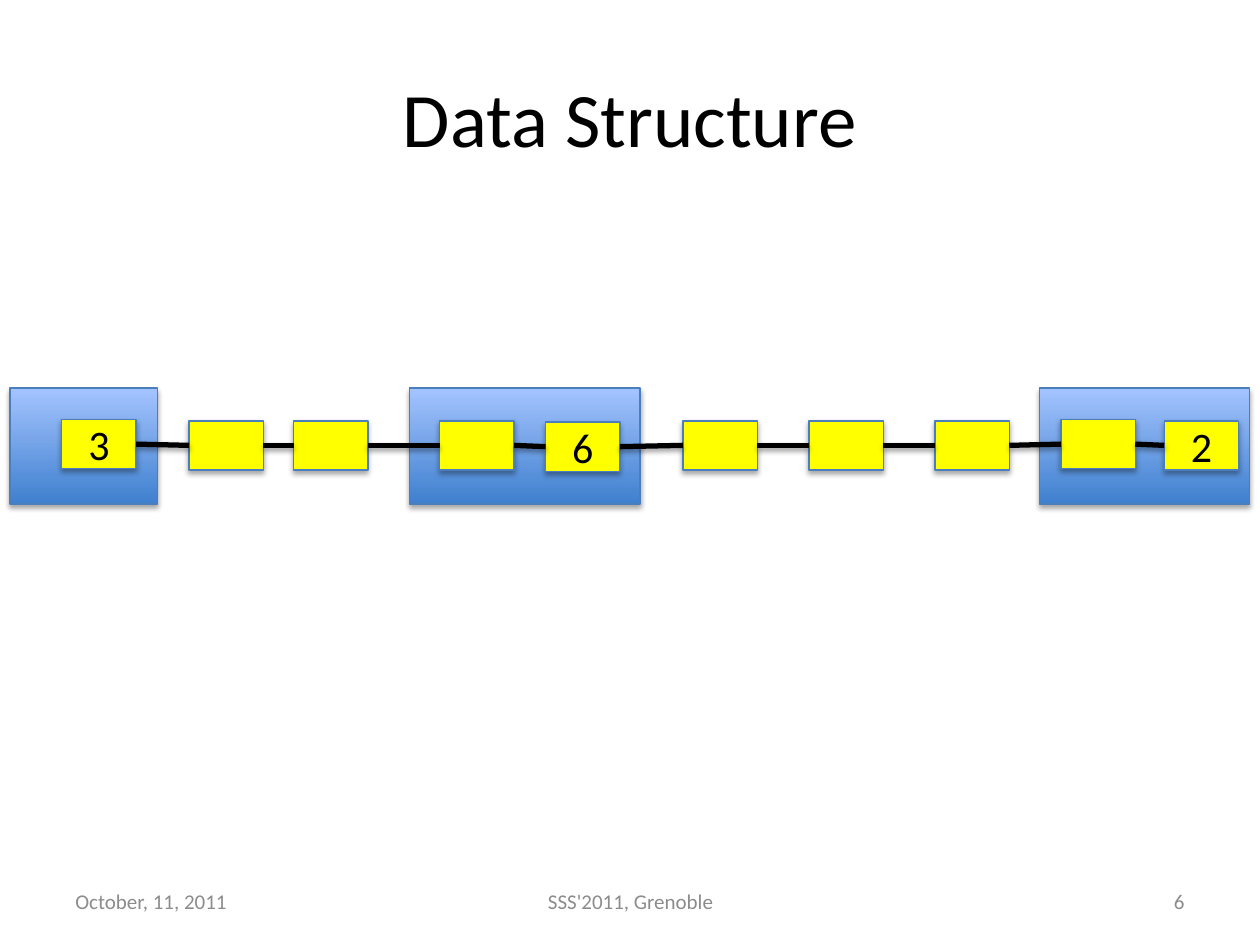
from itertools import pairwise

from lxml import etree
from pptx import Presentation
from pptx.dml.color import RGBColor
from pptx.enum.shapes import MSO_CONNECTOR, MSO_SHAPE
from pptx.enum.text import MSO_ANCHOR, PP_ALIGN
from pptx.oxml.ns import qn
from pptx.util import Inches, Pt

RECT, STRAIGHT = MSO_SHAPE.RECTANGLE, MSO_CONNECTOR.STRAIGHT
MIDDLE = MSO_ANCHOR.MIDDLE
LEFT, CENTER, RIGHT = PP_ALIGN.LEFT, PP_ALIGN.CENTER, PP_ALIGN.RIGHT
LEFT_SITE, RIGHT_SITE = 1, 3

FONT = "Calibri"
COLORS = {
    "text": "000000",
    "footer": "8C8C8C",
    "group_dark": "3F80CE",
    "group_light": "A4C4FF",
    "node": "FFFF00",
    "outline": "4B7EBC",
    "link": "000000",
    "shadow": "000000",
}
NODE_W, NODE_H = 0.59, 0.39

# (left, width) of each group, (left, top, label) of each node in the chain
GROUPS = [(0.08, 1.17), (3.25, 1.83), (8.25, 1.67)]
NODES = [
    (0.49, 3.33, "3"), (1.5, 3.34, ""), (2.33, 3.34, ""), (3.49, 3.34, ""),
    (4.33, 3.35, "6"), (5.42, 3.34, ""), (6.42, 3.34, ""), (7.42, 3.34, ""),
    (8.42, 3.33, ""), (9.24, 3.34, "2"),
]
FOOTER = [
    (0.5, 2.33, "October, 11, 2011", LEFT),
    (3.42, 3.17, "SSS'2011, Grenoble", CENTER),
    (7.17, 2.33, "6", RIGHT),
]


def rgb(name):
    return RGBColor.from_string(COLORS[name])


def write(sp, text, size, color, align):
    tf = sp.text_frame
    tf.word_wrap = True
    tf.vertical_anchor = MIDDLE
    p = tf.paragraphs[0]
    p.alignment = align
    r = p.add_run()
    r.text = text
    for key, value in {"name": FONT, "size": Pt(size)}.items():
        setattr(r.font, key, value)
    r.font.color.rgb = rgb(color)


def add_shadow(sp, dist, alpha):
    """Soft shadow straight below the shape; call after the line is set."""
    effects = etree.SubElement(sp._element.spPr, qn("a:effectLst"))
    shadow = etree.SubElement(
        effects, qn("a:outerShdw"), blurRad=str(Pt(3.1)), dist=str(Pt(dist)),
        dir=str(90 * 60000), rotWithShape="0")
    color = etree.SubElement(shadow, qn("a:srgbClr"), val=COLORS["shadow"])
    etree.SubElement(color, qn("a:alpha"), val=str(alpha * 1000))


def add_box(slide, left, top, width, height):
    sp = slide.shapes.add_shape(
        RECT, Inches(left), Inches(top), Inches(width), Inches(height))
    sp.line.color.rgb = rgb("outline")
    sp.line.width = Pt(0.75)
    add_shadow(sp, 1.8, 35)
    return sp


def add_group_box(slide, left, top, width, height):
    fill = add_box(slide, left, top, width, height).fill
    fill.gradient()
    fill.gradient_angle = 90
    for stop, name in zip(fill.gradient_stops, ("group_dark", "group_light")):
        stop.color.rgb = rgb(name)


def add_node(slide, left, top, label):
    sp = add_box(slide, left, top, NODE_W, NODE_H)
    sp.fill.solid()
    sp.fill.fore_color.rgb = rgb("node")
    if label:
        write(sp, label, 24, "text", CENTER)
    return sp


def add_link(slide, start, end):
    link = slide.shapes.add_connector(STRAIGHT, 0, 0, 0, 0)
    link.begin_connect(start, RIGHT_SITE)
    link.end_connect(end, LEFT_SITE)
    link.line.color.rgb = rgb("link")
    link.line.width = Pt(3)
    add_shadow(link, 1.6, 38)


def add_title(slide, left, top, width, height):
    title = slide.shapes.title
    box = {"left": left, "top": top, "width": width, "height": height}
    for key, value in box.items():
        setattr(title, key, Inches(value))
    write(title, "Data Structure", 44, "text", CENTER)


def add_chain(slide, top, height):
    for left, width in GROUPS:
        add_group_box(slide, left, top, width, height)
    nodes = [add_node(slide, *node) for node in NODES]
    for start, end in pairwise(nodes):
        add_link(slide, start, end)


def add_footer(slide, top, height):
    for left, width, text, align in FOOTER:
        sp = slide.shapes.add_textbox(
            Inches(left), Inches(top), Inches(width), Inches(height))
        write(sp, text, 12, "footer", align)


def main():
    prs = Presentation()
    prs.slide_width, prs.slide_height = Inches(10), Inches(7.5)
    slide = prs.slides.add_slide(prs.slide_layouts[5])
    add_title(slide, 0.5, 0.3, 9, 1.25)
    add_chain(slide, 3.08, 0.92)
    add_footer(slide, 6.95, 0.4)
    prs.save("out.pptx")


if __name__ == "__main__":
    main()
